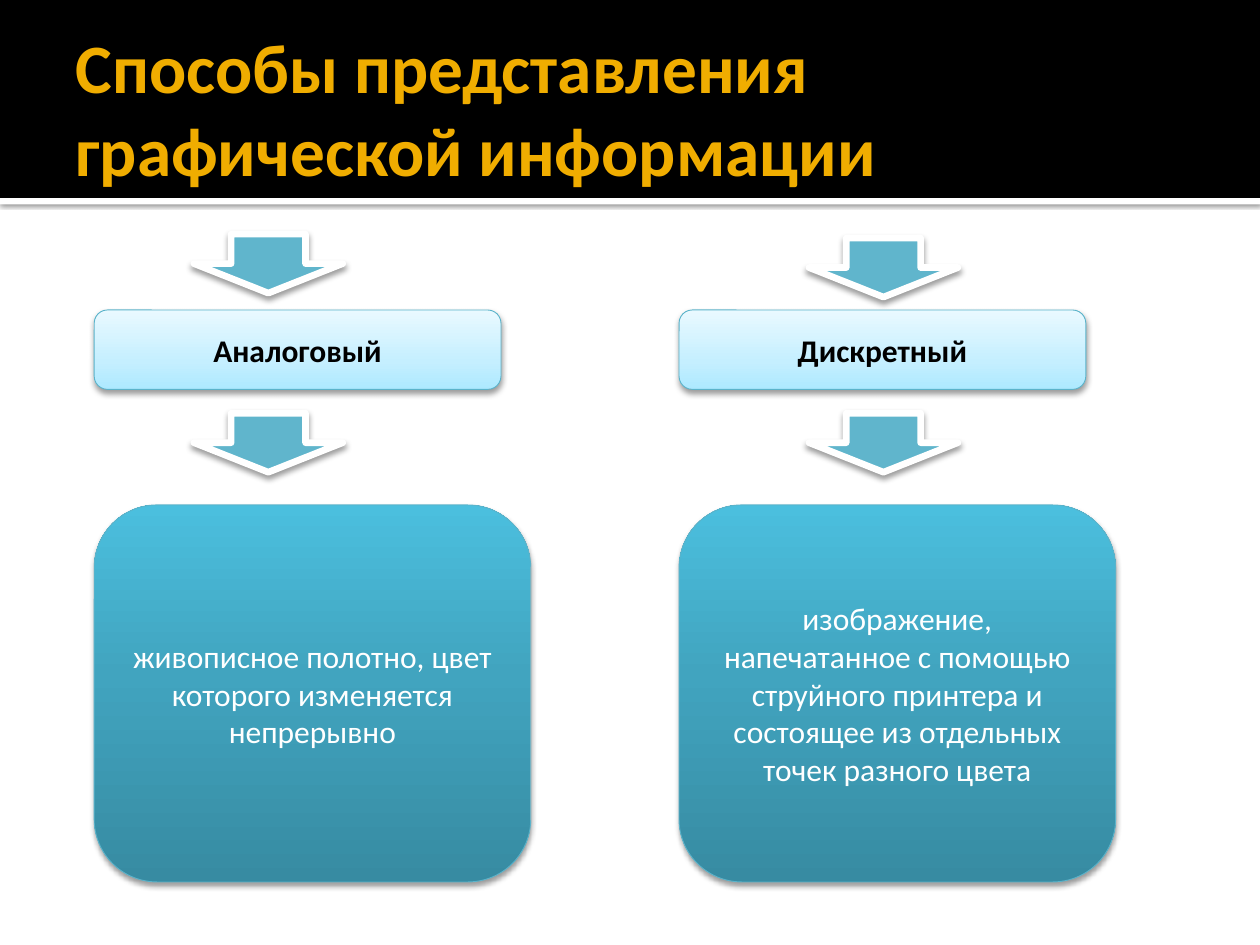
from lxml.etree import SubElement
from pptx import Presentation
from pptx.dml.color import RGBColor
from pptx.enum.shapes import MSO_SHAPE
from pptx.enum.text import MSO_ANCHOR, PP_ALIGN
from pptx.oxml.ns import qn
from pptx.util import Cm, Pt

WHITE = RGBColor(0xFF, 0xFF, 0xFF)
BLACK = RGBColor(0, 0, 0)
GOLD = RGBColor(0xF0, 0xAD, 0x00)
TEAL = RGBColor(0x60, 0xB5, 0xCC)
EDGE = RGBColor(0x5B, 0xB3, 0xCA)
PALE = [(0, RGBColor(0xAD, 0xE9, 0xFF)), (35, RGBColor(0xC5, 0xEF, 0xFF)),
        (100, RGBColor(0xE9, 0xF9, 0xFF))]
DEEP = [(0, RGBColor(0x37, 0x8B, 0xA2)), (55, RGBColor(0x41, 0xA4, 0xBF)),
        (100, RGBColor(0x4B, 0xBF, 0xDE))]


def add_form(kind, box, fill, line=None, width=0, blur=None, dist=2, alpha=38):
    """Add a shape with a solid or gradient fill and an optional soft shadow."""
    form = slide.shapes.add_shape(kind, *[Cm(n) for n in box])
    if isinstance(fill, list):
        form.fill.gradient()
        form.fill.gradient_angle = 90
        stops = form.element.spPr.find(qn("a:gradFill")).find(qn("a:gsLst"))
        for stop in list(stops):
            stops.remove(stop)
        for place, tone in fill:
            stop = SubElement(stops, qn("a:gs"), pos=str(place * 1000))
            SubElement(stop, qn("a:srgbClr"), val=str(tone))
    else:
        form.fill.solid()
        form.fill.fore_color.rgb = fill
    if line is None:
        form.line.fill.background()
    else:
        form.line.color.rgb = line
        form.line.width = Pt(width)
    form.shadow.inherit = False
    if blur:
        effects = form.element.spPr.find(qn("a:effectLst"))
        shade = SubElement(effects, qn("a:outerShdw"), blurRad=str(Pt(blur)),
                           dist=str(Pt(dist)), dir="5400000", rotWithShape="0")
        tone = SubElement(shade, qn("a:srgbClr"), val=str(BLACK))
        SubElement(tone, qn("a:alpha"), val=str(alpha * 1000))
    return form


def add_text(form, text, size, color, bold, align):
    """Put one vertically centred paragraph into a shape."""
    frame = form.text_frame
    frame.word_wrap = True
    frame.vertical_anchor = MSO_ANCHOR.MIDDLE
    para = frame.paragraphs[0]
    para.text = text
    para.alignment = align
    para.font.name = "Calibri"
    para.font.size = Pt(size)
    para.font.bold = bold
    para.font.color.rgb = color


deck = Presentation()
deck.slide_width, deck.slide_height = Cm(25.4), Cm(19.05)
slide = deck.slides.add_slide(deck.slide_layouts[6])

# Header band with its white rule
add_form(MSO_SHAPE.RECTANGLE, (0, 3.99, 25.4, 0.13), WHITE,
         blur=2.5, dist=0.8, alpha=60)
add_form(MSO_SHAPE.RECTANGLE, (0, 0, 25.4, 3.99), BLACK)

# Title
title = slide.shapes.add_textbox(Cm(1.27), Cm(0.43), Cm(22.86), Cm(3.48))
title.text_frame.margin_right = Cm(0.13)
add_text(title, "Способы представления графической информации",
         39.6, GOLD, True, PP_ALIGN.LEFT)

# Two columns: box left, arrow left, first arrow top, name, example
columns = [
    (1.9, 3.91, 4.72, "Аналоговый",
     "живописное полотно, цвет которого изменяется непрерывно"),
    (13.69, 16.31, 4.8, "Дискретный",
     "изображение, напечатанное с помощью струйного принтера и "
     "состоящее из отдельных точек разного цвета"),
]
for left, tip, top, name, sample in columns:
    # Arrows above and below the name
    for y in (top, 8.33):
        add_form(MSO_SHAPE.DOWN_ARROW, (tip, y, 3, 1.19), TEAL,
                 WHITE, 3.82, blur=3.5)
    # Name of the method
    label = add_form(MSO_SHAPE.ROUNDED_RECTANGLE, (left, 6.25, 8.2, 1.6), PALE,
                     EDGE, 0.5, blur=3.5)
    add_text(label, name, 18, BLACK, True, PP_ALIGN.CENTER)
    # Example
    card = add_form(MSO_SHAPE.ROUNDED_RECTANGLE, (left, 10.18, 8.8, 7.6), DEEP,
                    EDGE, 0.5, blur=3.1)
    add_text(card, sample, 18, WHITE, False, PP_ALIGN.CENTER)

deck.save("out.pptx")
